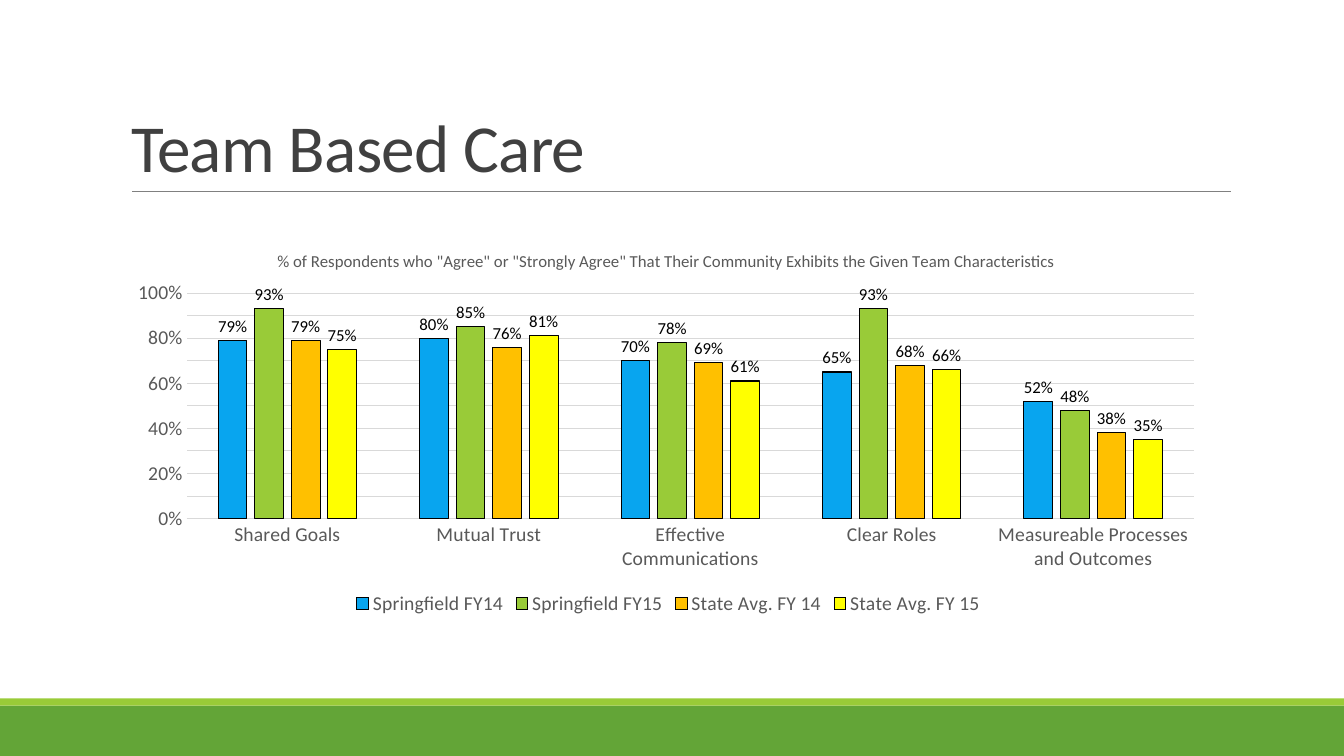
from copy import deepcopy

from lxml import etree
from pptx import Presentation
from pptx import util as u
from pptx.chart.data import CategoryChartData
from pptx.dml.color import RGBColor
from pptx.enum import chart as ch, shapes, text
from pptx.oxml import parse_xml
from pptx.oxml.ns import nsdecls, qn

FONT = "Calibri"
BLACK = RGBColor(0x00, 0x00, 0x00)
DARK_GREY = RGBColor(0x40, 0x40, 0x40)
TEXT_GREY = RGBColor(0x59, 0x59, 0x59)
RULE_GREY = RGBColor(0x80, 0x80, 0x80)
GRID_GREY = RGBColor(0xD9, 0xD9, 0xD9)
GREEN = RGBColor(0x63, 0xA5, 0x37)
LIME = RGBColor(0x99, 0xCB, 0x38)
BLUE = RGBColor(0x08, 0xA5, 0xEF)
AMBER = RGBColor(0xFF, 0xC0, 0x00)
YELLOW = RGBColor(0xFF, 0xFF, 0x00)

CHART_TITLE = ('% of Respondents who "Agree" or "Strongly Agree" That Their '
               'Community Exhibits the Given Team Characteristics')
CATEGORIES = ["Shared Goals", "Mutual Trust", "Effective Communications",
              "Clear Roles", "Measureable Processes and Outcomes"]
SERIES = [
    ("Springfield FY14", BLUE, (0.79, 0.80, 0.70, 0.65, 0.52)),
    ("Springfield FY15", LIME, (0.93, 0.85, 0.78, 0.93, 0.48)),
    ("State Avg. FY 14", AMBER, (0.79, 0.76, 0.69, 0.68, 0.38)),
    ("State Avg. FY 15", YELLOW, (0.75, 0.81, 0.61, 0.66, 0.35)),
]


def style_font(font, size, color):
    font.name = FONT
    font.size = u.Pt(size)
    font.bold = False
    font.color.rgb = color


def style_line(line, color, width=0.75):
    line.color.rgb = color
    line.width = u.Pt(width)


def add_band(page, left, top, width, height, color):
    band = page.shapes.add_shape(shapes.MSO_SHAPE.RECTANGLE,
                                 *map(u.Inches, (left, top, width, height)))
    band.shadow.inherit = False
    band.fill.solid()
    band.fill.fore_color.rgb = color
    band.line.fill.background()


def add_footer(page, left, top, width, height):
    """Draw a lime strip above a green band."""
    strip = 0.07
    add_band(page, left, top + strip, width, height - strip, GREEN)
    add_band(page, left, top, width, strip, LIME)


def add_title(page, left, top, width, height):
    """Place the title and the rule along its lower edge."""
    title = page.shapes.title
    title.left, title.top, title.width, title.height = map(
        u.Inches, (left, top, width, height))
    frame = title.text_frame
    frame.text = "Team Based Care"
    frame.word_wrap = True
    frame.auto_size = text.MSO_AUTO_SIZE.NONE
    frame.vertical_anchor = text.MSO_ANCHOR.BOTTOM
    para = frame.paragraphs[0]
    para.alignment = text.PP_ALIGN.LEFT
    para.line_spacing = 0.85
    span = para.runs[0]
    style_font(span.font, 48, DARK_GREY)
    span._r.get_or_add_rPr().set("spc", "-50")

    bottom = u.Inches(top + height)
    rule = page.shapes.add_connector(
        shapes.MSO_CONNECTOR.STRAIGHT,
        u.Inches(left + 0.11), bottom, u.Inches(left + width + 0.01), bottom)
    style_line(rule.line, RULE_GREY, 0.5)
    etree.SubElement(rule._element.spPr, qn("a:effectLst"))


def manual_layout(**settings):
    items = "".join(f'<c:{name} val="{value}"/>' for name, value in settings.items())
    return parse_xml(f'<c:layout {nsdecls("c")}><c:manualLayout>{items}'
                     '</c:manualLayout></c:layout>')


def set_layout(parent, layout, position):
    for old in parent.findall(qn("c:layout")):
        parent.remove(old)
    parent.insert(position, layout)


def style_axes(chart):
    for axis in (chart.category_axis, chart.value_axis):
        axis.major_tick_mark = axis.minor_tick_mark = ch.XL_TICK_MARK.NONE
        style_font(axis.tick_labels.font, 14, TEXT_GREY)
    style_line(chart.category_axis.format.line, GRID_GREY)

    values = chart.value_axis
    values.minimum_scale, values.maximum_scale = 0, 1
    values.major_unit, values.minor_unit = 0.2, 0.1
    values.has_major_gridlines = values.has_minor_gridlines = True
    style_line(values.major_gridlines.format.line, GRID_GREY)
    major, minor = (values._element.find(qn(f"c:{kind}Gridlines"))
                    for kind in ("major", "minor"))
    minor.append(deepcopy(major.find(qn("c:spPr"))))
    values.format.line.fill.background()
    values.tick_labels.number_format = "0%"
    values.tick_labels.number_format_is_linked = False


def style_columns(plot):
    plot.gap_width = 219
    plot.overlap = -27
    plot.vary_by_categories = False
    for series, (_, color, _) in zip(plot.series, SERIES):
        series.format.fill.solid()
        series.format.fill.fore_color.rgb = color
        style_line(series.format.line, BLACK)
        labels = series.data_labels
        labels.show_value = True
        labels.number_format = "0%"
        labels.number_format_is_linked = False
        labels.position = ch.XL_LABEL_POSITION.OUTSIDE_END
        style_font(labels.font, 12, BLACK)


def add_survey_chart(page, left, top, width, height):
    data = CategoryChartData(number_format="0%")
    data.categories = CATEGORIES
    for name, _, values in SERIES:
        data.add_series(name, values)
    chart = page.shapes.add_chart(
        ch.XL_CHART_TYPE.COLUMN_CLUSTERED,
        *map(u.Inches, (left, top, width, height)), data).chart
    style_font(chart.font, 10, BLACK)

    chart.has_title = True
    heading = chart.chart_title
    heading.text_frame.text = CHART_TITLE
    style_font(heading.text_frame.paragraphs[0].runs[0].font, 12, TEXT_GREY)
    set_layout(heading._element,
               manual_layout(xMode="edge", yMode="edge", x=0.14, y=0.04), 1)

    chart.has_legend = True
    chart.legend.position = ch.XL_LEGEND_POSITION.BOTTOM
    chart.legend.include_in_layout = False
    style_font(chart.legend.font, 14, TEXT_GREY)

    style_axes(chart)
    style_columns(chart.plots[0])
    plot_area = chart._chartSpace.chart.plotArea
    set_layout(plot_area, manual_layout(
        layoutTarget="inner", xMode="edge", yMode="edge",
        x=0.06, y=0.16, w=0.92, h=0.58), 0)


def main():
    deck = Presentation()
    deck.slide_width, deck.slide_height = u.Inches(13.33), u.Inches(7.5)
    page = deck.slides.add_slide(deck.slide_layouts[5])
    add_footer(page, 0, 6.93, 13.33, 0.57)
    add_title(page, 1.2, 0.31, 11, 1.59)
    add_survey_chart(page, 1.2, 2.29, 10.86, 3.86)
    deck.save("out.pptx")


if __name__ == "__main__":
    main()
